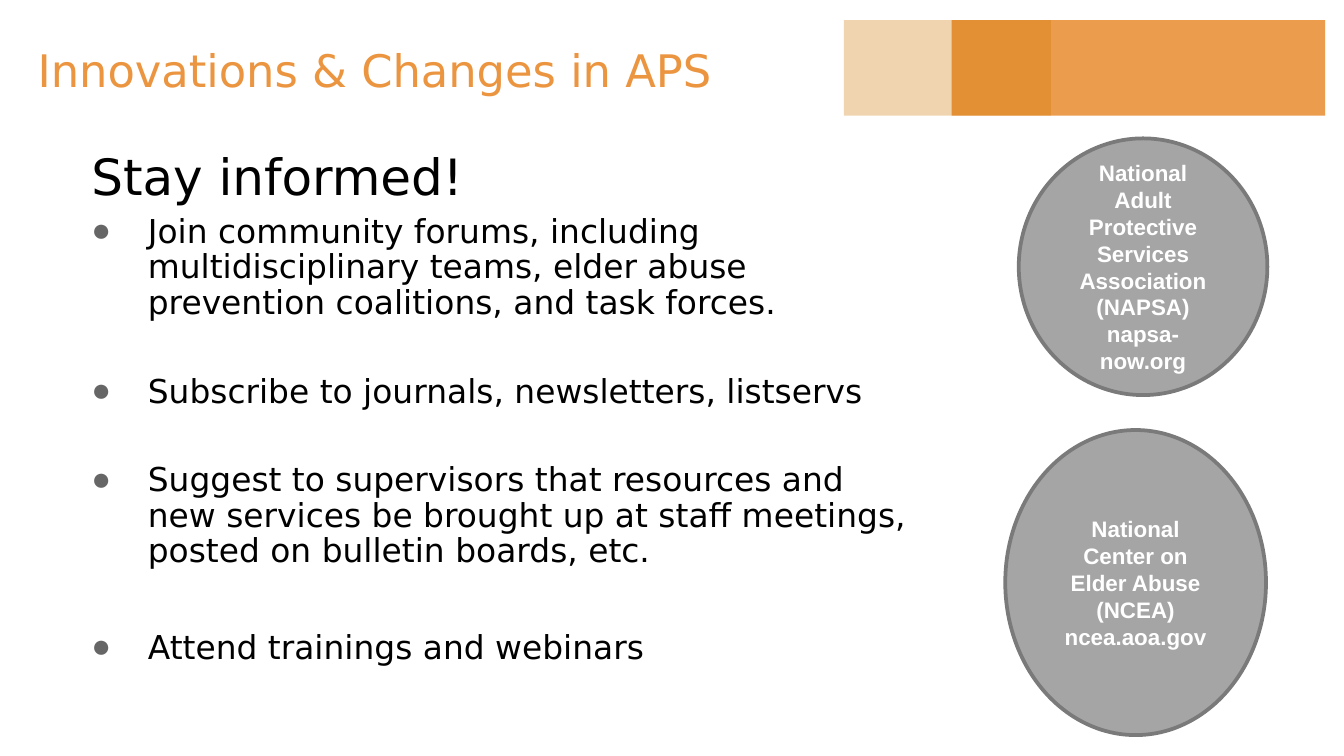
from lxml.etree import SubElement
from pptx import Presentation
from pptx.dml.color import RGBColor
from pptx.enum.shapes import MSO_SHAPE
from pptx.enum.text import MSO_ANCHOR, MSO_AUTO_SIZE, PP_ALIGN
from pptx.oxml.ns import qn
from pptx.util import Inches, Pt


def rgb(value):
    """Turn a hex string into a colour."""
    return RGBColor.from_string(value)


class Deck:
    """Hold the style and the current slide."""

    ORANGE, BLACK, WHITE = "EB9540", "000000", "FFFFFF"
    GREY, EDGE, BULLET = "A5A5A5", "7A7A7A", "666666"
    FONT, LABEL_FONT = "DejaVu Sans", "Arial"

    def __init__(self, slide):
        """Keep the slide to draw on."""
        self.s = slide

    def style(self, p, size, color, font, bold=False):
        """Format every run of a paragraph."""
        for r in p.runs:
            r.font.size, r.font.name, r.font.bold = Pt(size), font, bold
            r.font.color.rgb = rgb(color)

    def place(self, sp, box, anchor):
        """Move a placeholder and set up its text frame."""
        sp.left, sp.top, sp.width, sp.height = map(Inches, box)
        tf = sp.text_frame
        tf.word_wrap, tf.auto_size = True, MSO_AUTO_SIZE.NONE
        tf.vertical_anchor = anchor
        tf.margin_left = tf.margin_right = Inches(0.1)
        tf.margin_top = tf.margin_bottom = Inches(0.1)
        return tf

    def title(self, text, box):
        """Fill the title placeholder."""
        tf = self.place(self.s.shapes.title, box, MSO_ANCHOR.MIDDLE)
        tf.text = text
        p = tf.paragraphs[0]
        p.alignment = PP_ALIGN.LEFT
        self.style(p, 24, self.ORANGE, self.FONT)

    def bullet(self, p, char=None):
        """Set the hanging indent and the bullet, if any."""
        pPr = p._p.get_or_add_pPr()
        pPr.set("marL", str(Inches(0.5)))
        pPr.set("indent", str(Inches(-0.42)))
        if char:
            clr = SubElement(pPr, qn("a:buClr"))
            SubElement(clr, qn("a:srgbClr"), val=self.BULLET)
            SubElement(pPr, qn("a:buChar"), char=char)
        else:
            SubElement(pPr, qn("a:buNone"))

    def body(self, heading, items, box):
        """Fill the body placeholder with a heading and bullets."""
        tf = self.place(self.s.placeholders[1], box, MSO_ANCHOR.TOP)
        rows = [(heading, 26.8, 0, None)]
        rows += [(text, 17.6, before, "●") for text, before in items]
        for i, (text, size, before, char) in enumerate(rows):
            p = tf.paragraphs[0] if i == 0 else tf.add_paragraph()
            p.text = text
            self.bullet(p, char)
            p.line_spacing, p.space_before = 0.9, Pt(before)
            self.style(p, size, self.BLACK, self.FONT)

    def shape(self, kind, box, fill):
        """Add a filled shape without line or shadow."""
        sp = self.s.shapes.add_shape(kind, *map(Inches, box))
        sp.shadow.inherit = False
        sp.fill.solid()
        sp.fill.fore_color.rgb = rgb(fill)
        sp.line.fill.background()
        return sp

    def band(self, box, fill, opacity):
        """Add a translucent header band."""
        sp = self.shape(MSO_SHAPE.RECTANGLE, box, fill)
        clr = sp.element.spPr.find(".//" + qn("a:srgbClr"))
        SubElement(clr, qn("a:alpha"), val=str(opacity * 1000))

    def circle(self, lines, box):
        """Add an outlined ellipse with a centred label."""
        sp = self.shape(MSO_SHAPE.OVAL, box, self.GREY)
        sp.line.color.rgb, sp.line.width = rgb(self.EDGE), Pt(2)
        tf = sp.text_frame
        tf.word_wrap, tf.vertical_anchor = True, MSO_ANCHOR.MIDDLE
        for i, line in enumerate(lines):
            p = tf.paragraphs[0] if i == 0 else tf.add_paragraph()
            p.text = line
            p.alignment = PP_ALIGN.CENTER
            self.style(p, 12, self.WHITE, self.LABEL_FONT, True)


def main():
    """Build the slide and save it."""
    prs = Presentation()
    prs.slide_width = Inches(10)
    prs.slide_height = prs.slide_width * 9 // 16
    deck = Deck(prs.slides.add_slide(prs.slide_layouts[1]))
    deck.band((7.08, 0.15, 2.78, 0.71), deck.ORANGE, 93)
    deck.band((6.28, 0.15, 1.54, 0.71), "D07700", 31)
    deck.title("Innovations & Changes in APS", (0.18, 0.05, 9, 0.94))
    deck.body("Stay informed!", [
        ("Join community forums, including multidisciplinary teams, "
         "elder abuse prevention coalitions, and task forces.", 4.8),
        ("Subscribe to journals, newsletters, listservs", 28.6),
        ("Suggest to supervisors that resources and new services be "
         "brought up at staff meetings, posted on bulletin boards, etc.", 28.6),
        ("Attend trainings and webinars", 32.5),
    ], (0.5, 1.03, 6.35, 4.27))
    deck.circle(["National Adult Protective Services Association (NAPSA)",
                 "napsa-now.org"], (7.58, 1.03, 1.85, 1.91))
    deck.circle(["National Center on Elder Abuse (NCEA)", "ncea.aoa.gov"],
                (7.48, 3.2, 1.94, 2.27))
    prs.save("out.pptx")


if __name__ == "__main__":
    main()
